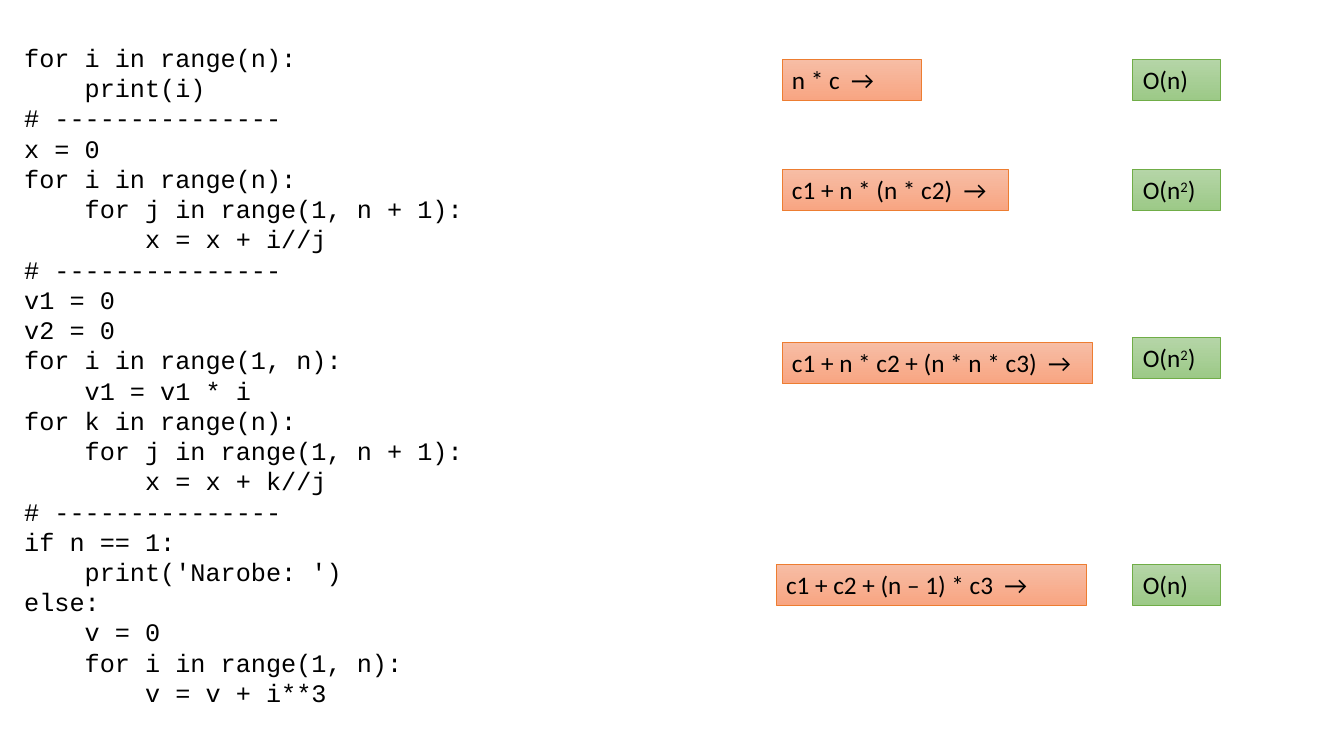
"""Build a slide that pairs Python loops with their running time."""
import pptx
import pptx.dml.color
import pptx.enum.shapes
import pptx.enum.text
import pptx.util

Cm = pptx.util.Cm
Pt = pptx.util.Pt

CODE = """for i in range(n):
    print(i)
# ---------------
x = 0
for i in range(n):
    for j in range(1, n + 1):
        x = x + i//j
# ---------------
v1 = 0
v2 = 0
for i in range(1, n):
    v1 = v1 * i
for k in range(n):
    for j in range(1, n + 1):
        x = x + k//j
# ---------------
if n == 1:
    print('Narobe: ')
else:
    v = 0
    for i in range(1, n):
        v = v + i**3"""

LINEAR = [("O(n)", 0)]
QUADRATIC = [("O(n", 0), ("2", 30000), (")", 0)]

# cost text, left, top, width, order of growth, order top
COSTS = [
    ("n * c  →", 19.71, 1.5, 3.5, LINEAR, 1.5),
    ("c1 + n * (n * c2)  →", 19.71, 4.28, 5.7, QUADRATIC, 4.28),
    ("c1 + n * c2 + (n * n * c3)  →", 19.71, 8.64, 7.83, QUADRATIC, 8.51),
    ("c1 + c2 + (n – 1) * c3  →", 19.56, 14.22, 7.83, LINEAR, 14.22),
]
ORDER_LEFT, ORDER_WIDTH, BOX_HEIGHT = 28.55, 2.2, 1.03

COLORS = {
    "text": "000000",
    "cost_top": "F7BDA5", "cost_bottom": "F8A582", "cost_line": "ED7D31",
    "order_top": "B5D5A7", "order_bottom": "9CC987", "order_line": "70AD47",
}


def rgb(name):
    return pptx.dml.color.RGBColor.from_string(COLORS[name])


def set_frame(tf, wrap):
    tf.word_wrap = wrap
    tf.auto_size = pptx.enum.text.MSO_AUTO_SIZE.SHAPE_TO_FIT_TEXT
    tf.vertical_anchor = pptx.enum.text.MSO_ANCHOR.TOP


def add_run(p, text, font, baseline=0):
    p.alignment = pptx.enum.text.PP_ALIGN.LEFT
    r = p.add_run()
    r.text = text
    r.font.name = font
    r.font.size = Pt(18)
    r.font.color.rgb = rgb("text")
    if baseline:
        r._r.get_or_add_rPr().set("baseline", str(baseline))


def add_box(s, kind, left, top, width, runs):
    sp = s.shapes.add_shape(pptx.enum.shapes.MSO_SHAPE.RECTANGLE,
                            Cm(left), Cm(top), Cm(width), Cm(BOX_HEIGHT))
    sp.shadow.inherit = False
    sp.fill.gradient()
    sp.fill.gradient_angle = 270
    for stop, end in zip(sp.fill.gradient_stops, ("top", "bottom")):
        stop.color.rgb = rgb(f"{kind}_{end}")
    sp.line.color.rgb = rgb(f"{kind}_line")
    sp.line.width = Pt(0.5)
    set_frame(sp.text_frame, True)
    for text, baseline in runs:
        add_run(sp.text_frame.paragraphs[0], text, "Calibri", baseline)


def main():
    prs = pptx.Presentation()
    prs.slide_width, prs.slide_height = Cm(33.87), Cm(19.05)
    s = prs.slides.add_slide(prs.slide_layouts[6])

    tf = s.shapes.add_textbox(Cm(0.36), Cm(0.94), Cm(25.04), Cm(17.2)).text_frame
    set_frame(tf, True)
    for i, line in enumerate(CODE.split("\n")):
        p = tf.add_paragraph() if i else tf.paragraphs[0]
        add_run(p, line, "Courier New")

    for cost, left, top, width, order, order_top in COSTS:
        add_box(s, "cost", left, top, width, [(cost, 0)])
        add_box(s, "order", ORDER_LEFT, order_top, ORDER_WIDTH, order)

    prs.save("out.pptx")


if __name__ == "__main__":
    main()
